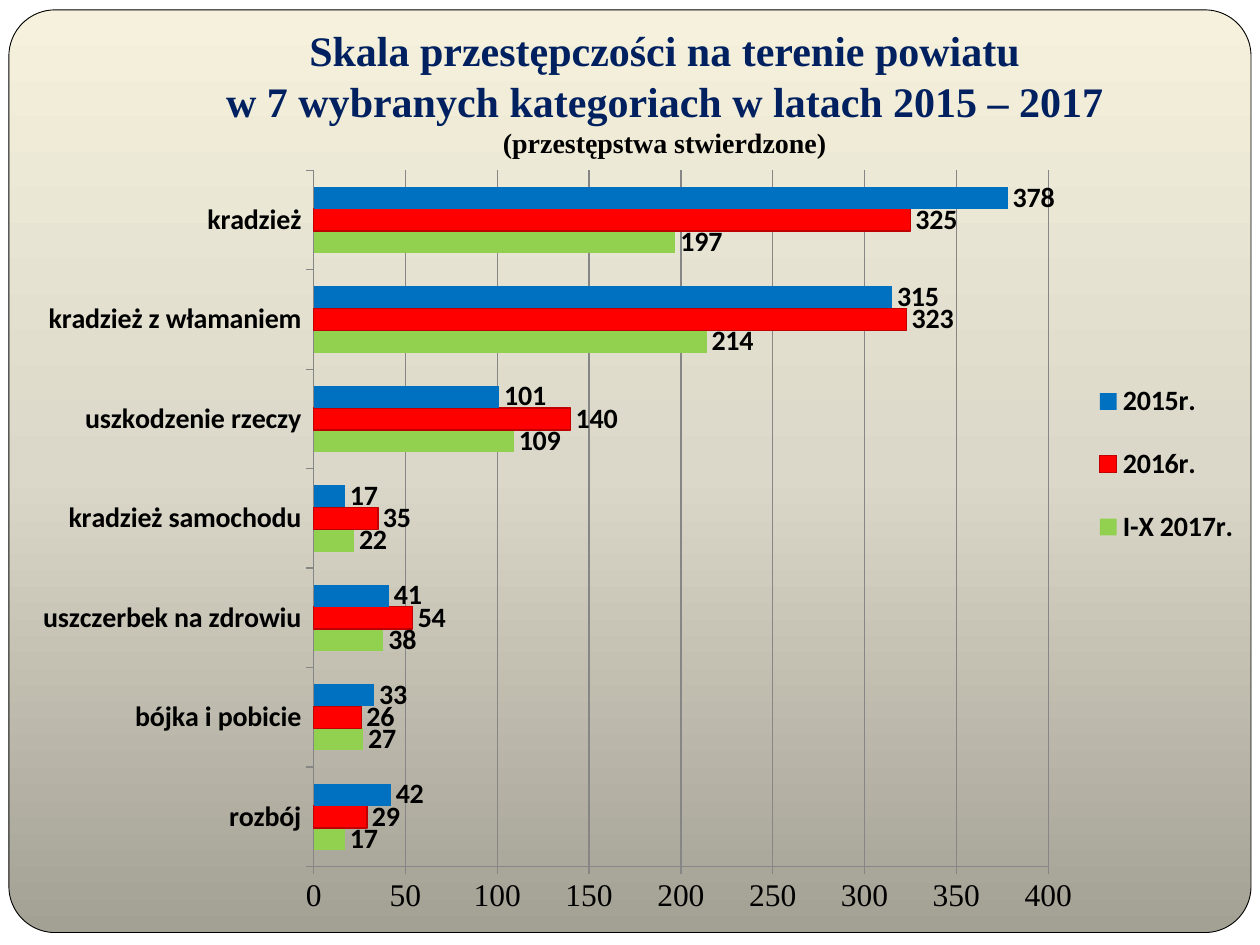
from lxml import etree
from pptx import Presentation
from pptx.chart.data import CategoryChartData
from pptx.dml.color import RGBColor
from pptx.enum.chart import XL_CHART_TYPE, XL_LABEL_POSITION, XL_LEGEND_POSITION, XL_TICK_MARK
from pptx.enum.shapes import MSO_SHAPE
from pptx.enum.text import MSO_ANCHOR, PP_ALIGN
from pptx.oxml.ns import qn
from pptx.util import Cm, Pt

BAR_CLUSTERED = XL_CHART_TYPE.BAR_CLUSTERED
OUTSIDE_END = XL_LABEL_POSITION.OUTSIDE_END
LEGEND_RIGHT = XL_LEGEND_POSITION.RIGHT
TICK_OUTSIDE = XL_TICK_MARK.OUTSIDE
ROUNDED = MSO_SHAPE.ROUNDED_RECTANGLE
BOTTOM = MSO_ANCHOR.BOTTOM
CENTER = PP_ALIGN.CENTER

COLORS = {
    "white": "FFFFFF", "black": "000000", "navy": "002060", "grid": "868686",
    "shade": "A3A094", "middle": "DBD8C9", "light": "F5F1DC",
    "green": "92D050", "red": "FF0000", "dark_red": "C00000", "blue": "0070C0",
}
SERIF = "Times New Roman"
SANS = "Calibri"

TITLE = [
    ("Skala przestępczości na terenie powiatu", 24, "navy"),
    ("w 7 wybranych kategoriach w latach 2015 – 2017", 24, "navy"),
    ("(przestępstwa stwierdzone)", 16, "black"),
]
CATEGORIES = [
    "rozbój", "bójka i pobicie", "uszczerbek na zdrowiu", "kradzież samochodu",
    "uszkodzenie rzeczy", "kradzież z włamaniem", "kradzież",
]
SERIES = [
    ("I-X 2017r.", [17, 27, 38, 22, 109, 214, 197], "green", None),
    ("2016r.", [29, 26, 54, 35, 140, 323, 325], "red", "dark_red"),
    ("2015r.", [42, 33, 41, 17, 101, 315, 378], "blue", None),
]


def color(name):
    return RGBColor.from_string(COLORS[name])


def style(font, size, face, bold=False, tint="black"):
    font.size = Pt(size)
    font.name = face
    font.bold = bold
    font.color.rgb = color(tint)


def add_panel(page, left, top, width, height):
    panel = page.shapes.add_shape(ROUNDED, left, top, width, height)
    panel.shadow.inherit = False
    panel.adjustments[0] = 0.05
    panel.line.color.rgb = color("black")
    panel.line.width = Pt(0.5)
    panel.fill.gradient()
    panel.fill.gradient_angle = 90
    stops = panel.fill._fill._gradFill.find(qn("a:gsLst"))
    for stop in list(stops):
        stops.remove(stop)
    for position, name in ((0, "shade"), (50, "middle"), (100, "light")):
        stop = etree.SubElement(stops, qn("a:gs"), pos=str(position * 1000))
        etree.SubElement(stop, qn("a:srgbClr"), val=COLORS[name])


def add_title(page, left, top, width, height):
    box = page.shapes.add_textbox(left, top, width, height)
    frame = box.text_frame
    frame.word_wrap = True
    frame.vertical_anchor = BOTTOM
    frame.margin_bottom = Cm(0.9)
    for index, (text, size, tint) in enumerate(TITLE):
        para = frame.paragraphs[0] if index == 0 else frame.add_paragraph()
        para.alignment = CENTER
        span = para.add_run()
        span.text = text
        style(span.font, size, SERIF, True, tint)


def set_layout(parent, before, x, y, w, h, inner=False):
    old = parent.find(qn("c:layout"))
    if old is not None:
        parent.remove(old)
    layout = etree.Element(qn("c:layout"))
    manual = etree.SubElement(layout, qn("c:manualLayout"))
    values = [("xMode", "edge"), ("yMode", "edge"), ("x", x), ("y", y), ("w", w), ("h", h)]
    if inner:
        values.insert(0, ("layoutTarget", "inner"))
    for tag, value in values:
        etree.SubElement(manual, qn("c:" + tag), val=str(value))
    parent.find(qn(before)).addprevious(layout)


def add_crime_chart(page, left, top, width, height):
    data = CategoryChartData()
    data.categories = CATEGORIES
    for name, values, _, _ in SERIES:
        data.add_series(name, values)
    chart = page.shapes.add_chart(BAR_CLUSTERED, left, top, width, height, data).chart
    chart.has_title = False
    style(chart.font, 18, SERIF)

    plot = chart.plots[0]
    plot.gap_width = 150
    plot.overlap = 0
    plot.vary_by_categories = False
    for series, (_, _, tint, outline) in zip(plot.series, SERIES):
        series.format.fill.solid()
        series.format.fill.fore_color.rgb = color(tint)
        if outline:
            series.format.line.color.rgb = color(outline)
            series.format.line.width = Pt(0.75)
        labels = series.data_labels
        labels.show_value = True
        labels.position = OUTSIDE_END
        style(labels.font, 16, SANS, True)

    scale = chart.value_axis
    scale.minimum_scale = 0
    scale.maximum_scale = 400
    scale.major_unit = 50
    scale.has_major_gridlines = True
    style(scale.tick_labels.font, 18, SERIF)
    style(chart.category_axis.tick_labels.font, 16, SANS, True)
    for axis in (scale, chart.category_axis):
        axis.major_tick_mark = TICK_OUTSIDE
    for ruled in (scale, chart.category_axis, scale.major_gridlines):
        ruled.format.line.color.rgb = color("grid")
        ruled.format.line.width = Pt(0.75)

    chart.has_legend = True
    legend = chart.legend
    legend.position = LEGEND_RIGHT
    legend.include_in_layout = False
    style(legend.font, 16, SANS, True)
    set_layout(legend._element, "c:overlay", 0.86, 0.26, 0.13, 0.28)
    area = chart._chartSpace.chart.plotArea
    set_layout(area, "c:barChart", 0.24, 0.02, 0.59, 0.9, inner=True)


def main():
    deck = Presentation()
    deck.slide_width = Cm(25.4)
    deck.slide_height = Cm(19.05)
    page = deck.slides.add_slide(deck.slide_layouts[6])
    page.background.fill.solid()
    page.background.fill.fore_color.rgb = color("white")
    add_panel(page, Cm(0.18), Cm(0.2), Cm(25.04), Cm(18.6))
    add_title(page, Cm(3.1), Cm(0.71), Cm(20.6), Cm(3.4))
    add_crime_chart(page, Cm(0.3), Cm(3.12), Cm(25.1), Cm(15.6))
    deck.save("out.pptx")


if __name__ == "__main__":
    main()
